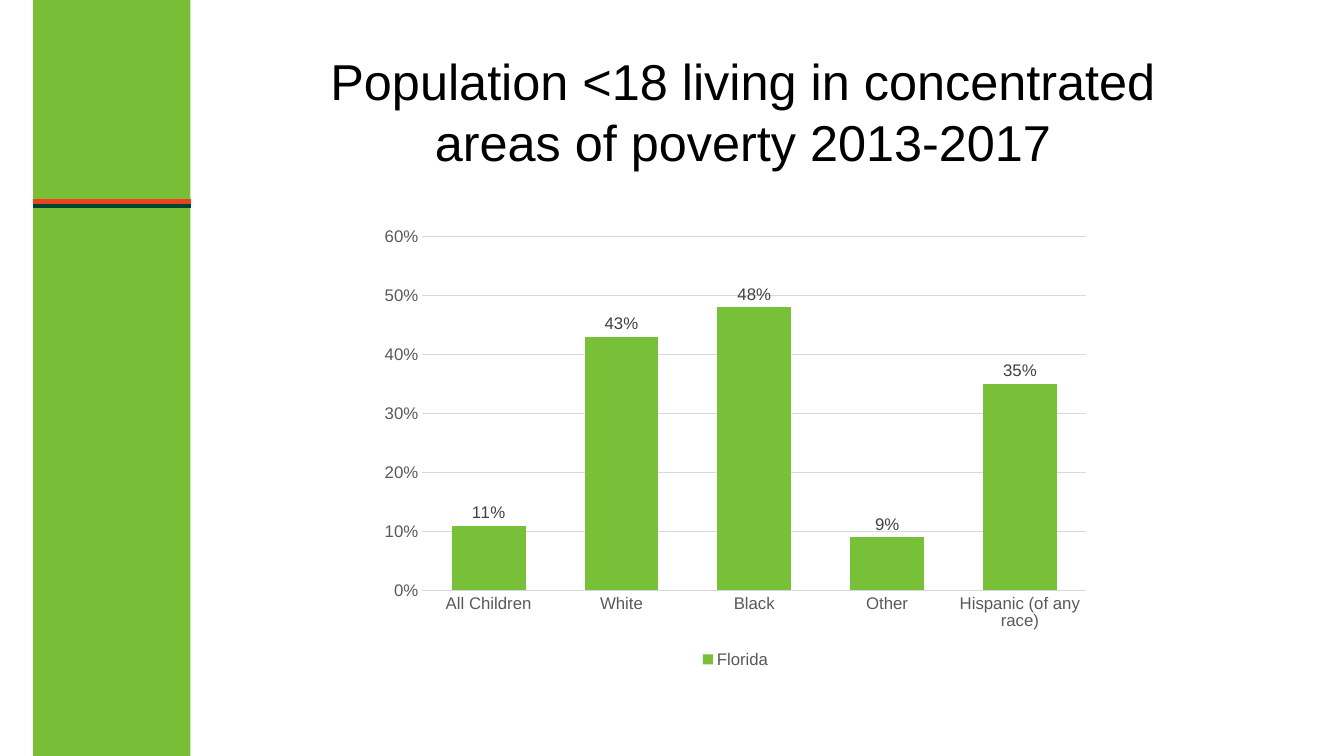
"""Build the slide on children living in concentrated areas of poverty."""
from dataclasses import dataclass

from lxml import etree
from pptx import Presentation
from pptx import util as u
from pptx.chart.data import CategoryChartData
from pptx.dml.color import RGBColor
from pptx.enum import chart as charts, shapes, text
from pptx.oxml import ns

BAND_GREEN = RGBColor(0x78, 0xBF, 0x37)
BAR_GREEN = RGBColor(0x78, 0xC0, 0x37)
RED = RGBColor(0xEA, 0x42, 0x1F)
DARK_GREEN = RGBColor(0x00, 0x45, 0x31)
BLACK = RGBColor(0x00, 0x00, 0x00)
LABEL_GREY = RGBColor(0x40, 0x40, 0x40)
AXIS_GREY = RGBColor(0x59, 0x59, 0x59)
GRID_GREY = RGBColor(0xD9, 0xD9, 0xD9)
FONT = "Arial"
BAND_LEFT, BAND_WIDTH = 0.33, 1.56


@dataclass(frozen=True)
class Stripe:
    """A horizontal line across the side band."""
    top: float
    color: RGBColor


STRIPES = [Stripe(2.0, RED), Stripe(2.04, DARK_GREEN)]
SHARES = {
    "All Children": 0.11,
    "White": 0.43,
    "Black": 0.48,
    "Other": 0.09,
    "Hispanic (of any race)": 0.35,
}


def style_font(font, size: float, color: RGBColor) -> None:
    """Set the typeface, size and colour of a font."""
    font.name = FONT
    font.size = u.Pt(size)
    font.color.rgb = color


def style_line(line, color: RGBColor, width: float) -> None:
    """Set the colour and width of a line."""
    line.color.rgb = color
    line.width = u.Pt(width)


def draw_band(slide) -> None:
    """Draw the green band at the left edge."""
    band = slide.shapes.add_shape(
        shapes.MSO_SHAPE.RECTANGLE, u.Inches(BAND_LEFT), u.Inches(0),
        u.Inches(BAND_WIDTH), u.Inches(7.5))
    band.shadow.inherit = False
    band.fill.solid()
    band.fill.fore_color.rgb = BAND_GREEN
    band.line.fill.background()


def draw_stripe(slide, stripe: Stripe) -> None:
    """Draw one stripe across the band."""
    top = u.Inches(stripe.top)
    rule = slide.shapes.add_connector(
        shapes.MSO_CONNECTOR.STRAIGHT, u.Inches(BAND_LEFT), top,
        u.Inches(BAND_LEFT + BAND_WIDTH), top)
    style_line(rule.line, stripe.color, 3)
    etree.SubElement(rule._element.spPr, ns.qn("a:effectLst"))


def draw_title(slide) -> None:
    """Write the centred slide title."""
    title = slide.shapes.add_textbox(
        u.Inches(3.08), u.Inches(0.42), u.Inches(8.58), u.Inches(1.67))
    frame = title.text_frame
    frame.word_wrap = True
    frame.margin_top = u.Inches(0.08)
    frame.vertical_anchor = text.MSO_ANCHOR.TOP
    heading = frame.paragraphs[0]
    heading.text = "Population <18 living in concentrated areas of poverty 2013-2017"
    heading.alignment = text.PP_ALIGN.CENTER
    style_font(heading.font, 36, BLACK)


def draw_chart(slide) -> None:
    """Draw the column chart of shares by group."""
    poverty = CategoryChartData(number_format="0%")
    poverty.categories = list(SHARES)
    poverty.add_series("Florida", list(SHARES.values()))
    chart = slide.shapes.add_chart(
        charts.XL_CHART_TYPE.COLUMN_CLUSTERED, u.Inches(3.67), u.Inches(2.17),
        u.Inches(7.25), u.Inches(4.5), poverty).chart
    style_font(chart.font, 10, BLACK)
    chart.has_title = False
    chart.has_legend = True
    chart.legend.position = charts.XL_LEGEND_POSITION.BOTTOM
    chart.legend.include_in_layout = False
    style_font(chart.legend.font, 12, AXIS_GREY)

    groups, shares = chart.category_axis, chart.value_axis
    for axis in (groups, shares):
        axis.major_tick_mark = charts.XL_TICK_MARK.NONE
        axis.minor_tick_mark = charts.XL_TICK_MARK.NONE
        style_font(axis.tick_labels.font, 12, AXIS_GREY)
    style_line(groups.format.line, GRID_GREY, 0.75)
    style_line(shares.major_gridlines.format.line, GRID_GREY, 0.75)
    shares.format.line.fill.background()
    shares.minimum_scale, shares.maximum_scale = 0, 0.6
    shares.major_unit = 0.1
    shares.tick_labels.number_format = "0%"
    shares.tick_labels.number_format_is_linked = False

    plot = chart.plots[0]
    plot.gap_width, plot.overlap = 80, -27
    plot.vary_by_categories = False
    florida = plot.series[0]
    florida.format.fill.solid()
    florida.format.fill.fore_color.rgb = BAR_GREEN
    labels = florida.data_labels
    labels.show_value = True
    labels.number_format = "0%"
    labels.number_format_is_linked = False
    labels.position = charts.XL_LABEL_POSITION.OUTSIDE_END
    style_font(labels.font, 12, LABEL_GREY)


def main() -> None:
    """Assemble and save the slide."""
    deck = Presentation()
    deck.slide_width, deck.slide_height = u.Inches(13.33), u.Inches(7.5)
    slide = deck.slides.add_slide(deck.slide_layouts[6])
    draw_band(slide)
    for stripe in STRIPES:
        draw_stripe(slide, stripe)
    draw_title(slide)
    draw_chart(slide)
    deck.save("out.pptx")


if __name__ == "__main__":
    main()
